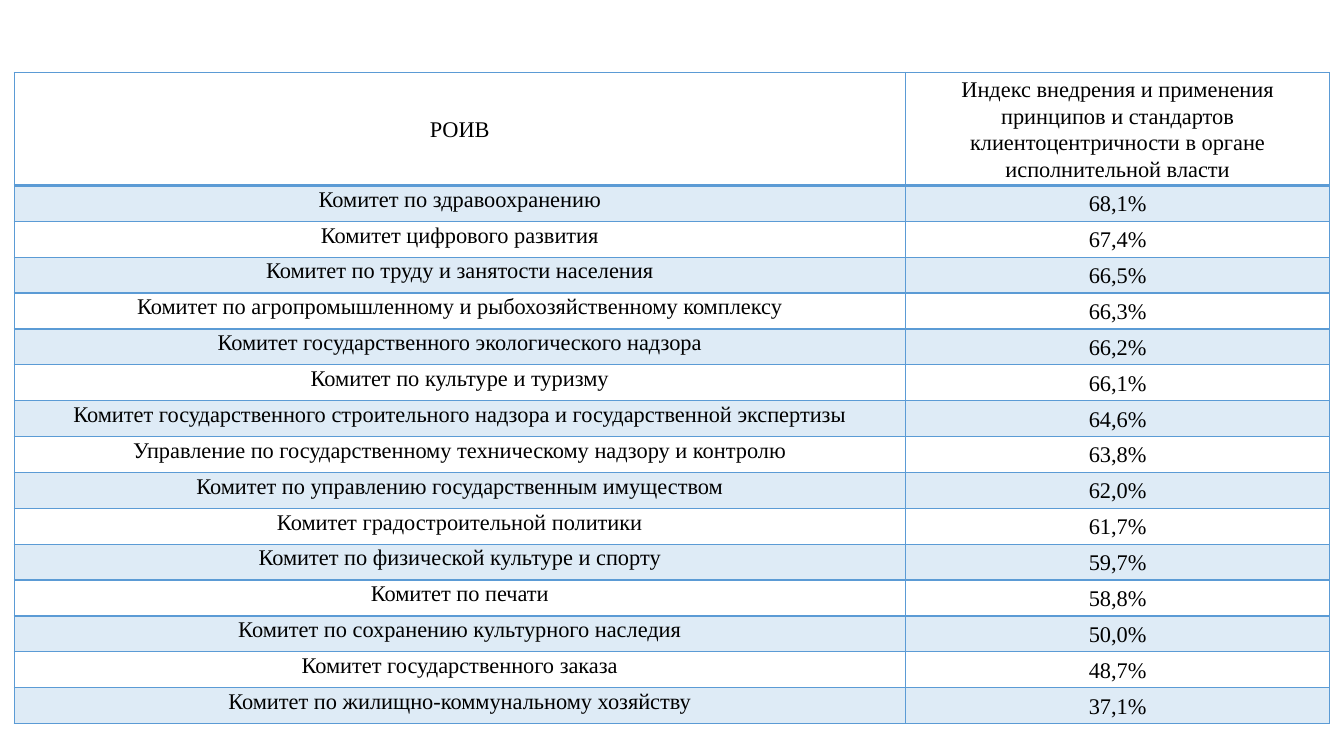
import pptx
import pptx.dml.color
import pptx.enum.text
import pptx.oxml.ns
import pptx.util
from lxml import etree

# Content
HEADER = (
    "РОИВ",
    "Индекс внедрения и применения принципов и стандартов "
    "клиентоцентричности в органе исполнительной власти",
)
COMMITTEES = [
    ("Комитет по здравоохранению", "68,1%"),
    ("Комитет цифрового развития", "67,4%"),
    ("Комитет по труду и занятости населения", "66,5%"),
    ("Комитет по агропромышленному и рыбохозяйственному комплексу", "66,3%"),
    ("Комитет государственного экологического надзора", "66,2%"),
    ("Комитет по культуре и туризму", "66,1%"),
    ("Комитет государственного строительного надзора и государственной экспертизы", "64,6%"),
    ("Управление по государственному техническому надзору и контролю", "63,8%"),
    ("Комитет по управлению государственным имуществом", "62,0%"),
    ("Комитет градостроительной политики", "61,7%"),
    ("Комитет по физической культуре и спорту", "59,7%"),
    ("Комитет по печати", "58,8%"),
    ("Комитет по сохранению культурного наследия", "50,0%"),
    ("Комитет государственного заказа", "48,7%"),
    ("Комитет по жилищно-коммунальному хозяйству", "37,1%"),
]

# Layout and style
SLIDE_WIDTH, SLIDE_HEIGHT = 13.33, 7.5
LEFT, TOP, HEIGHT = 0.14, 0.72, 6.46
COLUMN_WIDTHS = (8.84, 4.21)
HEADER_HEIGHT = 1.12
ROW_HEIGHT = (HEIGHT - HEADER_HEIGHT) / len(COMMITTEES)
FONT, FONT_SIZE, LINE_SPACING = "Times New Roman", 16, 1.07
BLACK, BLUE = "000000", "5B9BD5"
BAND_OPACITY = 20

inches = pptx.util.Inches
qualified = pptx.oxml.ns.qn


def color(hex_string):
    return pptx.dml.color.RGBColor.from_string(hex_string)


def set_borders(cell, bottom_width):
    properties = cell._tc.get_or_add_tcPr()
    for side, width in (("L", 1), ("R", 1), ("T", 1), ("B", bottom_width)):
        line = etree.SubElement(properties, qualified(f"a:ln{side}"), w=str(pptx.util.Pt(width)))
        fill = etree.SubElement(line, qualified("a:solidFill"))
        etree.SubElement(fill, qualified("a:srgbClr"), val=BLUE)


def set_band(cell, banded):
    if not banded:
        cell.fill.background()
        return
    cell.fill.solid()
    cell.fill.fore_color.rgb = color(BLUE)
    tint = cell._tc.tcPr.find(qualified("a:solidFill")).find(qualified("a:srgbClr"))
    etree.SubElement(tint, qualified("a:alpha"), val=str(BAND_OPACITY * 1000))


def set_text(cell, text, margin, anchor):
    cell.margin_left = cell.margin_right = inches(margin)
    cell.margin_top = cell.margin_bottom = 0
    cell.vertical_anchor = anchor
    cell.text_frame.text = text
    paragraph = cell.text_frame.paragraphs[0]
    paragraph.alignment = pptx.enum.text.PP_ALIGN.CENTER
    paragraph.line_spacing = LINE_SPACING
    font = paragraph.runs[0].font
    font.name, font.size, font.bold = FONT, pptx.util.Pt(FONT_SIZE), False
    font.color.rgb = color(BLACK)


def main():
    presentation = pptx.Presentation()
    presentation.slide_width = inches(SLIDE_WIDTH)
    presentation.slide_height = inches(SLIDE_HEIGHT)
    slide = presentation.slides.add_slide(presentation.slide_layouts[6])

    # Table grid
    rows = [HEADER, *COMMITTEES]
    table = slide.shapes.add_table(
        len(rows), len(COLUMN_WIDTHS), inches(LEFT), inches(TOP),
        inches(sum(COLUMN_WIDTHS)), inches(HEIGHT),
    ).table
    for column, width in zip(table.columns, COLUMN_WIDTHS):
        column.width = inches(width)

    # Cells: committee names sit at the top, everything else in the middle
    anchors = pptx.enum.text.MSO_ANCHOR
    for row_index, texts in enumerate(rows):
        is_header = row_index == 0
        table.rows[row_index].height = inches(HEADER_HEIGHT if is_header else ROW_HEIGHT)
        for column_index, text in enumerate(texts):
            cell = table.cell(row_index, column_index)
            at_top = column_index == 0 and not is_header
            set_text(cell, text, 0.05 if is_header else 0.07,
                     anchors.TOP if at_top else anchors.MIDDLE)
            set_borders(cell, 2 if is_header else 1)
            set_band(cell, row_index % 2 == 1)

    # The first body row shares the thick line under the header
    for cell in table.rows[1].cells:
        cell._tc.tcPr.find(qualified("a:lnT")).set("w", str(pptx.util.Pt(2)))

    presentation.save("out.pptx")


if __name__ == "__main__":
    main()
